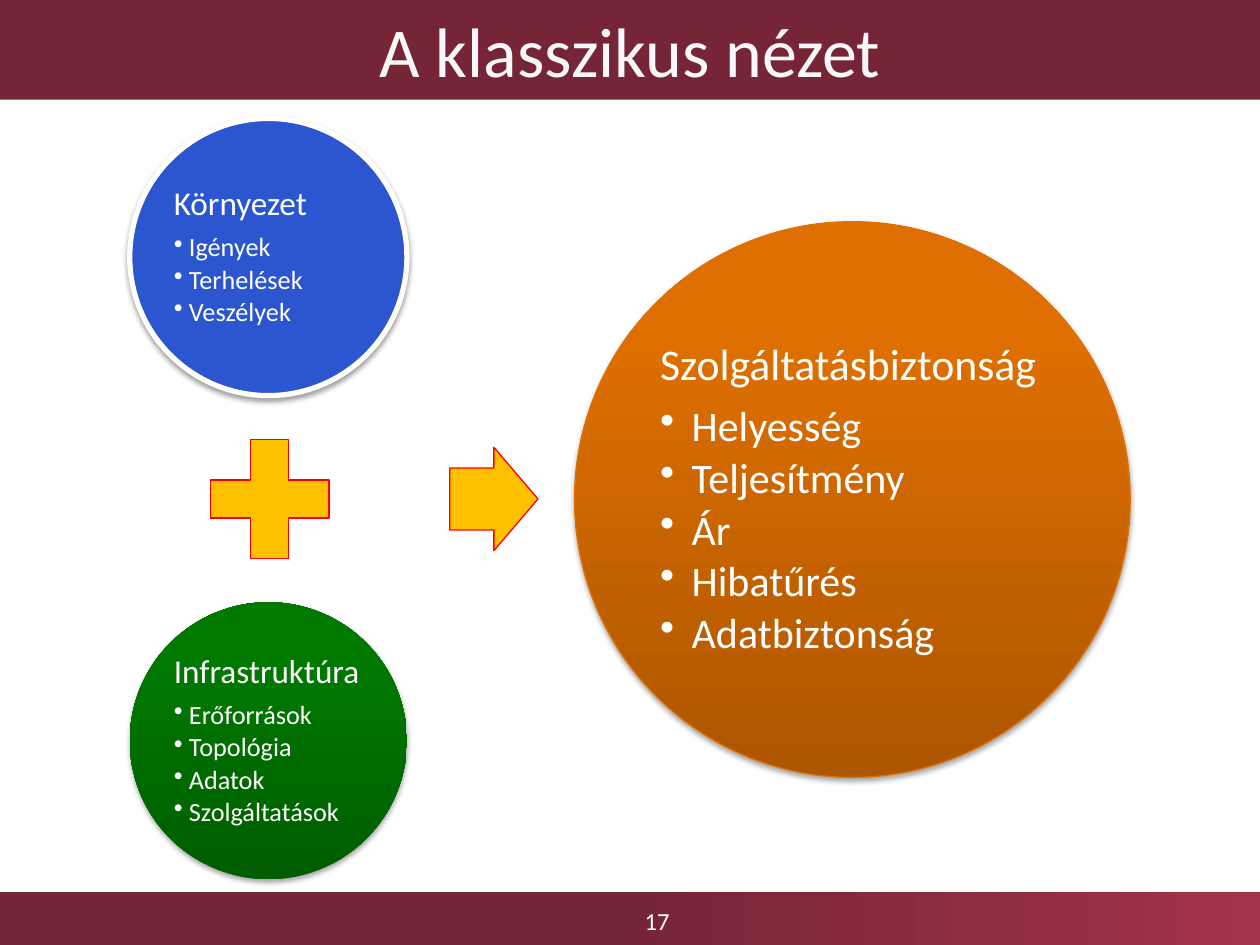
from copy import deepcopy
from dataclasses import dataclass
from math import sqrt

from lxml import etree
from pptx import Presentation
from pptx.dml.color import RGBColor
from pptx.enum.shapes import MSO_SHAPE
from pptx.enum.text import MSO_ANCHOR, PP_ALIGN
from pptx.oxml.ns import qn
from pptx.util import Inches, Pt

RECT = MSO_SHAPE.RECTANGLE
OVAL = MSO_SHAPE.OVAL
PLUS = MSO_SHAPE.MATH_PLUS
ARROW = MSO_SHAPE.RIGHT_ARROW
MIDDLE = MSO_ANCHOR.MIDDLE
CENTER = PP_ALIGN.CENTER


@dataclass(frozen=True)
class Theme:
    """Colours, font and type sizes of the slide."""
    font: str = "Calibri"
    bar: str = "762536"
    foot: tuple = ((0, "762536"), (50, "762536"), (100, "A3334B"))
    title: str = "F8F8F8"
    white: str = "FFFFFF"
    blue: str = "2B56CF"
    green: tuple = ((0, "005D00"), (80, "007900"), (100, "007A00"))
    orange: tuple = ((0, "AC5600"), (80, "DF6F00"), (100, "E07000"))
    rim: str = "E17000"
    sign: str = "FFC000"
    edge: str = "FF0000"
    big: int = 40
    num: int = 14
    small: tuple = (19, 15)
    large: tuple = (25, 24)


THEME = Theme()


def rgb(code):
    """Return the colour for a hex code."""
    return RGBColor.from_string(code)


def add_child(parent, tag, **attrs):
    """Append a drawing element with attributes."""
    return etree.SubElement(parent, qn(tag), {k: str(v) for k, v in attrs.items()})


def shade(fill, stops, angle):
    """Fill with a linear gradient of the given stops."""
    fill.gradient()
    fill.gradient_angle = angle
    last = fill.gradient_stops[1]._gs
    last.addnext(deepcopy(last))
    for stop, (place, code) in zip(fill.gradient_stops, stops):
        stop.position = place / 100
        stop.color.rgb = rgb(code)


def add_form(slide, kind, box, fill, line=None, width=0.75, angle=90):
    """Add a preset shape with a solid or gradient fill."""
    shape = slide.shapes.add_shape(kind, *map(Inches, box))
    shape.shadow.inherit = False
    if isinstance(fill, str):
        shape.fill.solid()
        shape.fill.fore_color.rgb = rgb(fill)
    else:
        shade(shape.fill, fill, angle)
    if line:
        shape.line.color.rgb = rgb(line)
        shape.line.width = Pt(width)
    else:
        shape.line.fill.background()
    return shape


def cast(shape, alpha, dist):
    """Give a shape a soft shadow below it."""
    effects = shape._element.spPr.find(qn("a:effectLst"))
    outer = add_child(effects, "a:outerShdw", blurRad=Pt(3.1), dist=Pt(dist),
                      dir=5400000, rotWithShape=0)
    tint = add_child(outer, "a:srgbClr", val="000000")
    add_child(tint, "a:alpha", val=alpha * 1000)


def set_font(para, size, code):
    """Set the font of a whole paragraph."""
    para.font.name = THEME.font
    para.font.size = Pt(size)
    para.font.color.rgb = rgb(code)


def put_line(frame, text, size, code):
    """Write one centred line in the middle of a frame."""
    frame.word_wrap = True
    frame.vertical_anchor = MIDDLE
    para = frame.paragraphs[0]
    para.text = text
    para.alignment = CENTER
    set_font(para, size, code)


def space(para, after):
    """Set tight lines and a gap below in percent of the type size."""
    para.line_spacing = 0.9
    para.space_after = Pt(0)
    gap = para._p.pPr.find(qn("a:spcAft"))
    gap.remove(gap[0])
    add_child(gap, "a:spcPct", val=after * 1000)


def add_list(slide, box, head, items, sizes, indent):
    """Add a heading with bullets inside the square of a circle."""
    left, top, size = box
    inset = size * (1 - sqrt(0.5)) / 2
    side = size - 2 * inset
    text = slide.shapes.add_textbox(
        *(Inches(round(v, 2)) for v in (left + inset, top + inset, side, side)))
    frame = text.text_frame
    frame.word_wrap = True
    frame.vertical_anchor = MIDDLE
    frame.margin_left = frame.margin_right = Inches(0.03)
    frame.margin_top = frame.margin_bottom = Inches(0.03)
    para = frame.paragraphs[0]
    para.text = head
    space(para, 35)
    set_font(para, sizes[0], THEME.white)
    for item in items:
        para = frame.add_paragraph()
        para.text = item
        para.level = 1
        space(para, 15)
        props = para._p.pPr
        props.set("marL", str(Inches(indent)))
        props.set("indent", str(-Inches(indent)))
        add_child(props, "a:buChar", char="•")
        set_font(para, sizes[1], THEME.white)


def add_ball(slide, box, fill, words, sizes, indent, line=None, width=0.75,
             alpha=35, dist=1.8):
    """Add a shadowed circle and its list."""
    left, top, size = box
    ball = add_form(slide, OVAL, (left, top, size, size), fill, line, width)
    cast(ball, alpha, dist)
    add_list(slide, box, *words, sizes, indent)


def main():
    """Build and save the slide."""
    deck = Presentation()
    deck.slide_width, deck.slide_height = Inches(10), Inches(7.5)
    slide = deck.slides.add_slide(deck.slide_layouts[6])

    add_form(slide, RECT, (0, 7.08, 10, 0.42), THEME.foot, angle=0)
    num = slide.shapes.add_textbox(*map(Inches, (3.59, 7.11, 3.25, 0.39)))
    put_line(num.text_frame, "17", THEME.num, THEME.white)
    bar = add_form(slide, RECT, (0, 0, 10, 0.79), THEME.bar)
    put_line(bar.text_frame, "A klasszikus nézet", THEME.big, THEME.title)

    add_ball(slide, (1.03, 0.94, 2.2), THEME.blue,
             ("Környezet", ("Igények", "Terhelések", "Veszélyek")),
             THEME.small, 0.12, THEME.white, 3, 38, 1.6)
    add_form(slide, PLUS, (1.5, 3.32, 1.28, 1.28), THEME.sign, THEME.edge)
    add_ball(slide, (1.03, 4.78, 2.2), THEME.green,
             ("Infrastruktúra",
              ("Erőforrások", "Topológia", "Adatok", "Szolgáltatások")),
             THEME.small, 0.12)
    arrow = add_form(slide, ARROW, (3.57, 3.55, 0.7, 0.82), THEME.sign, THEME.edge)
    arrow.adjustments[0] = 0.6
    add_ball(slide, (4.56, 1.76, 4.41), THEME.orange,
             ("Szolgáltatásbiztonság",
              ("Helyesség", "Teljesítmény", "Ár", "Hibatűrés", "Adatbiztonság")),
             THEME.large, 0.25, THEME.rim)
    deck.save("out.pptx")


if __name__ == "__main__":
    main()
